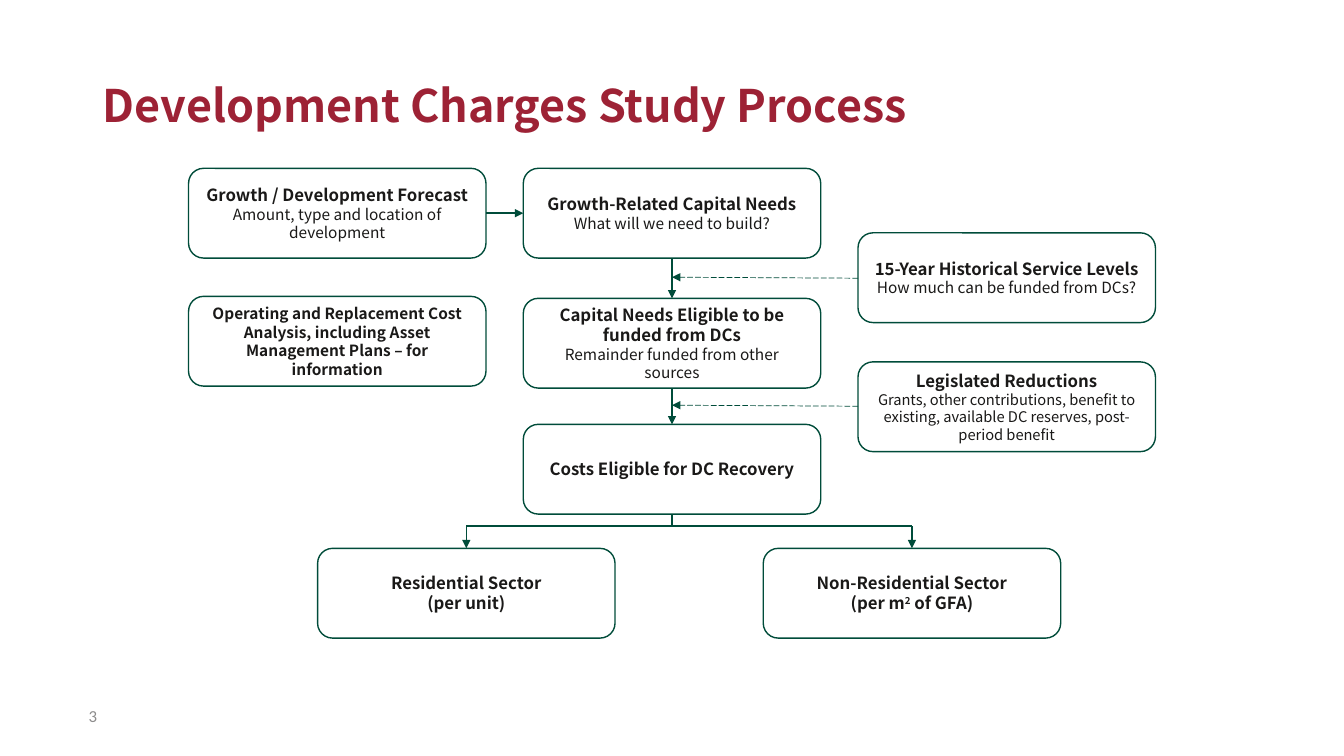
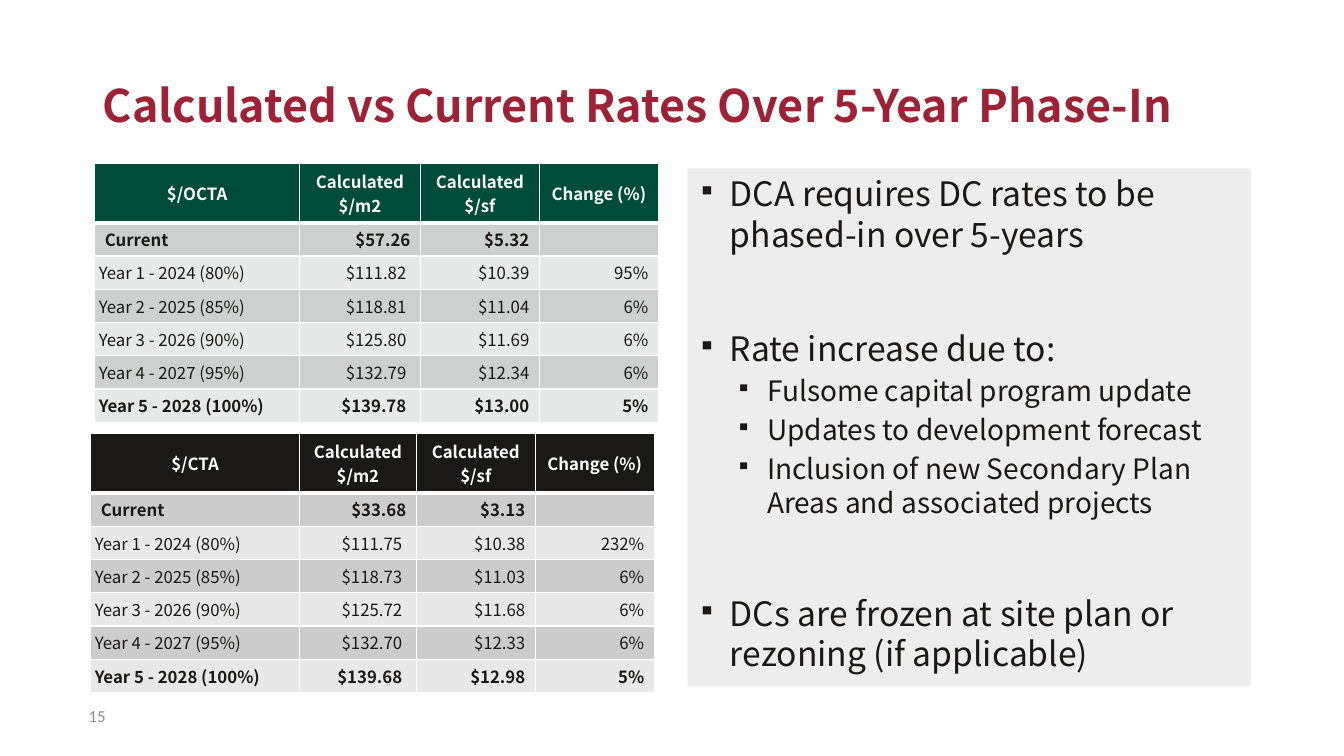
from dataclasses import dataclass

from lxml.etree import SubElement
from pptx import Presentation
from pptx.dml.color import RGBColor as RGB
from pptx.enum.dml import MSO_LINE
from pptx.enum.shapes import MSO_CONNECTOR as CONN, MSO_SHAPE as SHAPE
from pptx.enum.text import MSO_ANCHOR as ANCHOR, PP_ALIGN as ALIGN
from pptx.oxml.ns import qn
from pptx.util import Inches, Pt


@dataclass(frozen=True)
class Theme:
    font: str = "Noto Sans CJK JP"
    number_font: str = "Calibri"
    red: str = "9D2235"
    green: str = "004C3A"
    ink: str = "1A1918"
    white: str = "FFFFFF"
    grey: str = "8D8C8C"
    panel: str = "E7E6E6"
    green_bands: tuple = ("CCD0CE", "E7E9E8")
    grey_bands: tuple = ("CDCCCC", "E8E8E8")
    title: float = 32
    bullet: float = 24
    sub_bullet: float = 20
    body: float = 12
    detail: float = 11
    fine: float = 10.5


T = Theme()
BOX_W, BOX_H = 2.95, 0.89
TOP, LEFT, BOTTOM, RIGHT = range(4)  # connection sites of a box


# Text
def write(tf, text, *, p=None, size=T.body, color=T.ink, bold=False, font=T.font,
          align=ALIGN.LEFT, before=0, superscript=False):
    """Add text as a new paragraph, or as a run of paragraph p."""
    if p is None:
        first = tf.paragraphs[0]
        p = tf.add_paragraph() if first.runs else first
        p.alignment = align
        p.space_before = Pt(before)
    r = p.add_run()
    r.text = text
    f = r.font
    f.name, f.size, f.bold = font, Pt(size), bold
    f.color.rgb = RGB.from_string(color)
    if superscript:
        r._r.get_or_add_rPr().set("baseline", "30000")
    return p


def add_text(s, text, x, y, w, h, **fmt):
    tf = s.shapes.add_textbox(*map(Inches, (x, y, w, h))).text_frame
    tf.word_wrap = True
    tf.vertical_anchor = ANCHOR.MIDDLE
    write(tf, text, **fmt)


def add_bullet(tf, text, level=0, before=12):
    p = write(tf, text, size=T.sub_bullet if level else T.bullet, before=before)
    p.level = level
    indent, hang = ((0.32, 0.32), (0.69, 0.31))[level]
    pPr = p._p.get_or_add_pPr()
    pPr.set("marL", str(Inches(indent)))
    pPr.set("indent", str(-Inches(hang)))
    SubElement(pPr, qn("a:buSzPct"), val="75000")
    SubElement(pPr, qn("a:buChar"), char="▪")


# Slide frame
def new_slide(prs, title, number):
    s = prs.slides.add_slide(prs.slide_layouts[6])
    add_text(s, title, 0.92, 0.4, 11.5, 1.27, size=T.title, color=T.red, bold=True)
    add_text(s, str(number), 0.78, 6.9, 1.11, 0.4, color=T.grey, font=T.number_font)
    return s


# Flow chart parts
def add_box(s, x, y, head, detail=None, head_size=T.body, detail_size=T.detail):
    sp = s.shapes.add_shape(SHAPE.ROUNDED_RECTANGLE,
                            *map(Inches, (x, y, BOX_W, BOX_H)))
    sp.shadow.inherit = False
    sp.fill.solid()
    sp.fill.fore_color.rgb = RGB.from_string(T.white)
    sp.line.color.rgb = RGB.from_string(T.green)
    sp.line.width = Pt(1)
    tf = sp.text_frame
    tf.word_wrap = True
    tf.vertical_anchor = ANCHOR.MIDDLE
    for line in head.split("\n"):
        write(tf, line, size=head_size, bold=True, align=ALIGN.CENTER)
    if detail:
        write(tf, detail, size=detail_size, align=ALIGN.CENTER)
    return sp


def add_line(s, start=(0, 0), end=(0, 0), arrow=True, dashed=False):
    c = s.shapes.add_connector(CONN.STRAIGHT, *map(Inches, (*start, *end)))
    c.line.color.rgb = RGB.from_string(T.green)
    c.line.width = Pt(0.5 if dashed else 1)
    if dashed:
        c.line.dash_style = MSO_LINE.LONG_DASH
    if arrow:
        SubElement(c.line._get_or_add_ln(), qn("a:tailEnd"), type="triangle")
    SubElement(c._element.spPr, qn("a:effectLst"))
    return c


def join(s, source, source_site, target, target_site):
    c = add_line(s)
    c.begin_connect(source, source_site)
    c.end_connect(target, target_site)


# Table parts
def style_cell(cell, fill, top=1, bottom=1, margins=None):
    tcPr = cell._tc.get_or_add_tcPr()
    for side, width in (("L", 1), ("R", 1), ("T", top), ("B", bottom)):
        ln = SubElement(tcPr, qn("a:ln" + side), w=str(Pt(width)))
        solid = SubElement(ln, qn("a:solidFill"))
        SubElement(solid, qn("a:srgbClr"), val=T.white)
    cell.fill.solid()
    cell.fill.fore_color.rgb = RGB.from_string(fill)
    cell.vertical_anchor = ANCHOR.MIDDLE
    if margins:
        cell.margin_left, cell.margin_right = map(Inches, margins)
        cell.margin_top = cell.margin_bottom = 0


def add_rates(s, x, y, cols, unit, head_fill, bands, rows):
    labels = ["Current", "Year 1 - 2024 (80%)", "Year 2 - 2025 (85%)",
              "Year 3 - 2026 (90%)", "Year 4 - 2027 (95%)", "Year 5 - 2028 (100%)"]
    heads = [unit, "Calculated\n$/m2", "Calculated\n$/sf", "Change (%)"]
    heights = [0.59] + [0.33] * len(rows)
    frame = s.shapes.add_table(len(heights), len(cols),
                               *map(Inches, (x, y, sum(cols), sum(heights))))
    tbl = frame.table
    tbl.horz_banding = False
    for col, width in zip(tbl.columns, cols):
        col.width = Inches(width)
    for row, height in zip(tbl.rows, heights):
        row.height = Inches(height)

    for c, head in enumerate(heads):
        cell = tbl.cell(0, c)
        style_cell(cell, head_fill, bottom=3)
        for line in head.split("\n"):
            write(cell.text_frame, line, color=T.white, bold=True, align=ALIGN.CENTER)

    for r, (label, values) in enumerate(zip(labels, rows), 1):
        current = r == 1
        bold = r in (1, len(rows))
        for c, text in enumerate((label, *values)):
            cell = tbl.cell(r, c)
            if c == 0:
                margins = (0.1 if current else 0.04, 0)
            else:
                margins = (0, 0.14 if c == 1 and not current else 0.1)
            style_cell(cell, bands[(r - 1) % 2], top=3 if current else 1,
                       margins=margins)
            write(cell.text_frame, text, bold=bold,
                  align=ALIGN.RIGHT if c else ALIGN.LEFT)


# Slides
def process_slide(prs):
    s = new_slide(prs, "Development Charges Study Process", 3)
    left, mid, right = (1.87 + i * 3.32 for i in range(3))
    center = mid + BOX_W / 2

    forecast = add_box(s, left, 1.67, "Growth / Development Forecast",
                       "Amount, type and location of development")
    needs = add_box(s, mid, 1.67, "Growth-Related Capital Needs",
                    "What will we need to build?")
    add_box(s, left, 2.94, "Operating and Replacement Cost Analysis, including "
            "Asset Management Plans – for information", head_size=T.detail)
    add_box(s, right, 2.31, "15-Year Historical Service Levels",
            "How much can be funded from DCs?")
    eligible = add_box(s, mid, 2.96, "Capital Needs Eligible to be funded from DCs",
                       "Remainder funded from other sources")
    add_box(s, right, 3.59, "Legislated Reductions",
            "Grants, other contributions, benefit to existing, available DC "
            "reserves, post-period benefit", detail_size=T.fine)
    costs = add_box(s, mid, 4.21, "Costs Eligible for DC Recovery")

    sector_x, sector_y = (3.15, 7.57), 5.44
    add_box(s, sector_x[0], sector_y, "Residential Sector\n(per unit)")
    tf = add_box(s, sector_x[1], sector_y,
                 "Non-Residential Sector\n(per m").text_frame
    p = tf.paragraphs[-1]
    write(tf, "2", p=p, bold=True, superscript=True)
    write(tf, " of GFA)", p=p, bold=True)

    # Main flow
    join(s, forecast, RIGHT, needs, LEFT)
    join(s, needs, BOTTOM, eligible, TOP)
    join(s, eligible, BOTTOM, costs, TOP)

    # Fork to the two sectors
    fork_y = 5.22
    ends = [x + BOX_W / 2 for x in sector_x]
    add_line(s, (center, 4.21 + BOX_H), (center, fork_y), arrow=False)
    add_line(s, (ends[0], fork_y), (ends[1], fork_y), arrow=False)
    for x in ends:
        add_line(s, (x, fork_y), (x, sector_y))

    # Side inputs
    for y in (2.75, 4.02):
        add_line(s, (right, y + 0.01), (center, y), dashed=True)


def rates_slide(prs):
    s = new_slide(prs, "Calculated vs Current Rates Over 5-Year Phase-In", 15)
    add_rates(s, 0.94, 1.62, (2.03, 1.2, 1.18, 1.18), "$/OCTA", T.green, T.green_bands, [
        ("$57.26", "$5.32", ""),
        ("$111.82", "$10.39", "95%"),
        ("$118.81", "$11.04", "6%"),
        ("$125.80", "$11.69", "6%"),
        ("$132.79", "$12.34", "6%"),
        ("$139.78", "$13.00", "5%"),
    ])

    # Notes panel
    sp = s.shapes.add_shape(SHAPE.RECTANGLE, *map(Inches, (6.82, 1.67, 5.59, 5.14)))
    sp.shadow.inherit = False
    sp.fill.solid()
    sp.fill.fore_color.rgb = RGB.from_string(T.panel)
    SubElement(sp._element.spPr.find(".//" + qn("a:srgbClr")), qn("a:alpha"), val="70000")
    sp.line.fill.background()
    tf = sp.text_frame
    tf.word_wrap = True
    tf.vertical_anchor = ANCHOR.TOP
    section_gap = 53
    add_bullet(tf, "DCA requires DC rates to be phased-in over 5-years", before=0)
    add_bullet(tf, "Rate increase due to:", before=section_gap)
    for text in ("Fulsome capital program update", "Updates to development forecast",
                 "Inclusion of new Secondary Plan Areas and associated projects"):
        add_bullet(tf, text, level=1, before=3.8)
    add_bullet(tf, "DCs are frozen at site plan or rezoning (if applicable)",
               before=section_gap)

    add_rates(s, 0.9, 4.3, (2.07, 1.16, 1.18, 1.18), "$/CTA", T.ink, T.grey_bands, [
        ("$33.68", "$3.13", ""),
        ("$111.75", "$10.38", "232%"),
        ("$118.73", "$11.03", "6%"),
        ("$125.72", "$11.68", "6%"),
        ("$132.70", "$12.33", "6%"),
        ("$139.68", "$12.98", "5%"),
    ])


def main():
    prs = Presentation()
    prs.slide_width, prs.slide_height = Inches(13.33), Inches(7.5)
    process_slide(prs)
    rates_slide(prs)
    prs.save("out.pptx")


if __name__ == "__main__":
    main()
